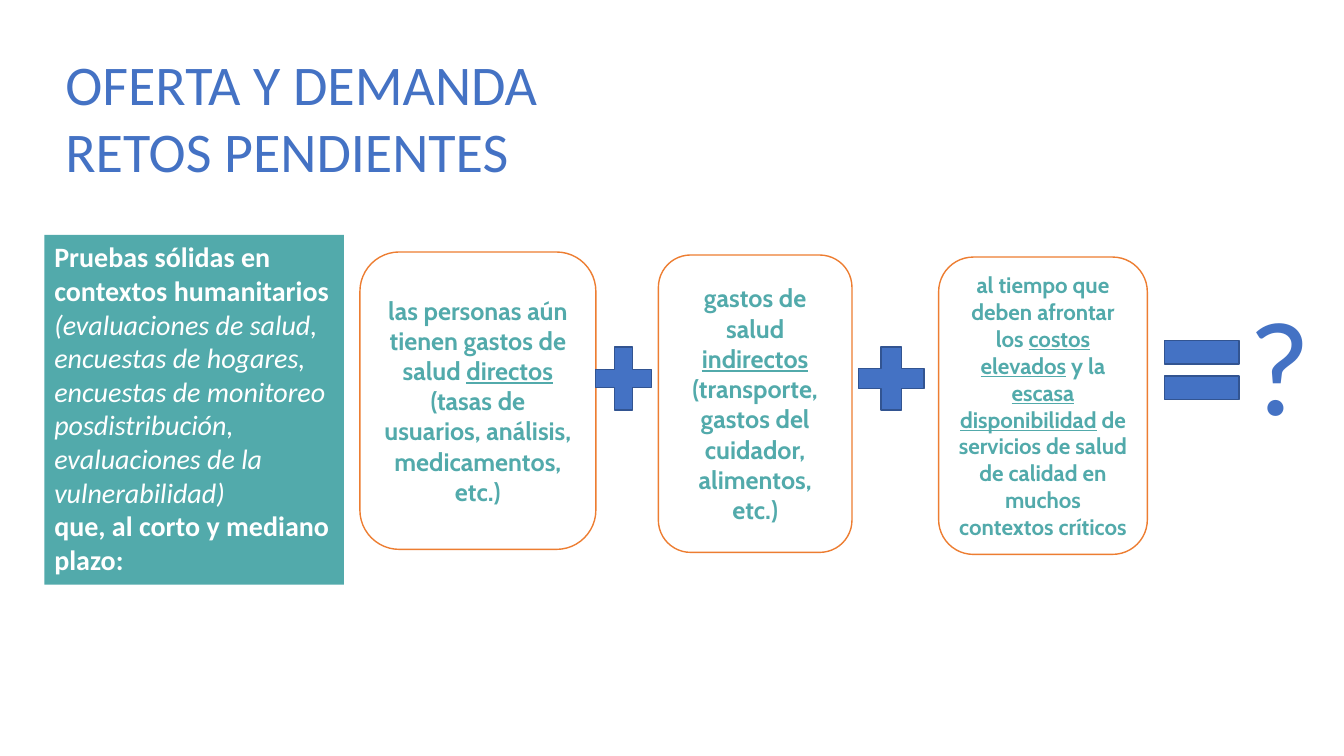
from dataclasses import dataclass

from pptx import Presentation
from pptx.dml.color import RGBColor
from pptx.enum.shapes import MSO_SHAPE
from pptx.enum.text import MSO_ANCHOR, PP_ALIGN
from pptx.util import Emu, Pt

PX = 9144


@dataclass(frozen=True)
class Theme:
    """Colours, fonts and type sizes of the slide."""
    white: str = "FFFFFF"
    teal: str = "52AAAB"
    orange: str = "ED7D31"
    blue: str = "4472C4"
    dark_blue: str = "325491"
    body_font: str = "Calibri"
    cost_font: str = "Cabin"
    title_size: int = 40
    evidence_size: int = 20
    cost_size: int = 18
    small_cost_size: int = 16
    question_size: int = 96


THEME = Theme()


def px(*lengths):
    """Turn whole px lengths into EMU."""
    return [Emu(length * PX) for length in lengths]


def write_text(holder, paragraphs, size, color, font=THEME.body_font, bold=False,
               align=PP_ALIGN.LEFT, anchor=MSO_ANCHOR.TOP):
    """Write paragraphs of (text, format overrides) runs into a shape."""
    frame = holder.text_frame
    frame.word_wrap = True
    frame.vertical_anchor = anchor
    for index, runs in enumerate(paragraphs):
        paragraph = frame.add_paragraph() if index else frame.paragraphs[0]
        paragraph.alignment = align
        for text, overrides in runs:
            for line_number, line in enumerate(text.split("\n")):
                if line_number:
                    paragraph.add_line_break()
                run = paragraph.add_run()
                run.text = line
                run.font.size = Pt(size)
                run.font.name = font
                run.font.bold = bold
                run.font.color.rgb = RGBColor.from_string(color)
                for name, value in overrides.items():
                    setattr(run.font, name, value)


def add_figure(slide, kind, box, fill, line=None):
    """Add a flat preset shape with a fill and an optional outline."""
    figure = slide.shapes.add_shape(kind, *px(*box))
    figure.shadow.inherit = False
    figure.fill.solid()
    figure.fill.fore_color.rgb = RGBColor.from_string(fill)
    if line:
        figure.line.color.rgb = RGBColor.from_string(line)
        figure.line.width = Pt(1)
    else:
        figure.line.fill.background()
    return figure


def add_label(slide, box, text, size):
    """Add a plain blue text box."""
    label = slide.shapes.add_textbox(*px(*box))
    write_text(label, [[(text, {})]], size, THEME.blue)


def add_evidence(slide, box):
    """Add the teal panel that introduces the evidence."""
    panel = add_figure(slide, MSO_SHAPE.RECTANGLE, box, THEME.teal)
    sources = ("(evaluaciones de salud, encuestas de hogares, encuestas de monitoreo "
               "posdistribución, evaluaciones de la vulnerabilidad)")
    write_text(panel, [
        [("Pruebas sólidas en contextos humanitarios ", {}),
         (sources, {"bold": False, "italic": True})],
        [("que, al corto y mediano plazo:", {})],
    ], THEME.evidence_size, THEME.white, bold=True)


def add_cost(slide, box, runs, size):
    """Add one rounded card that describes a cost."""
    card = add_figure(slide, MSO_SHAPE.ROUNDED_RECTANGLE, box, THEME.white, THEME.orange)
    write_text(card, [runs], size, THEME.teal, THEME.cost_font, True,
               PP_ALIGN.CENTER, MSO_ANCHOR.MIDDLE)


def add_equation(slide, box):
    """Add the cost cards, the signs that join them and the open result."""
    left, top, width, height = box
    key = {"underline": True}
    costs = [
        (0, 0, 234, THEME.cost_size, [
            ("las personas aún tienen gastos de salud ", {}), ("directos", key),
            (" (tasas de usuarios, análisis, medicamentos, etc.)", {})]),
        (296, 3, 192, THEME.cost_size, [
            ("gastos de salud ", {}), ("indirectos", key),
            (" (transporte, gastos del cuidador, alimentos, etc.)", {})]),
        (574, 5, 207, THEME.small_cost_size, [
            ("al tiempo que deben afrontar los ", {}), ("costos elevados", key),
            (" y la ", {}), ("escasa disponibilidad", key),
            (" de servicios de salud de calidad en muchos contextos críticos", {})]),
    ]
    for x, y, card_width, size, runs in costs:
        add_cost(slide, (left + x, top + y, card_width, height - 5), runs, size)
    signs = [
        (MSO_SHAPE.MATH_PLUS, 224, 83, 75, 85),
        (MSO_SHAPE.MATH_PLUS, 483, 83, 88, 85),
        (MSO_SHAPE.MATH_EQUAL, 785, 67, 100, 100),
    ]
    for kind, x, y, sign_width, sign_height in signs:
        add_figure(slide, kind, (left + x, top + y, sign_width, sign_height),
                   THEME.blue, THEME.dark_blue)
    add_label(slide, (left + width - 100, top + 24, 100, 172), "?", THEME.question_size)


def main():
    """Build and save the slide."""
    deck = Presentation()
    deck.slide_width, deck.slide_height = px(1333, 750)
    slide = deck.slides.add_slide(deck.slide_layouts[6])
    add_label(slide, (55, 44, 1210, 143), "OFERTA Y DEMANDA\nRETOS PENDIENTES", THEME.title_size)
    add_evidence(slide, (44, 233, 297, 347))
    add_equation(slide, (357, 250, 971, 300))
    deck.save("out.pptx")


if __name__ == "__main__":
    main()
